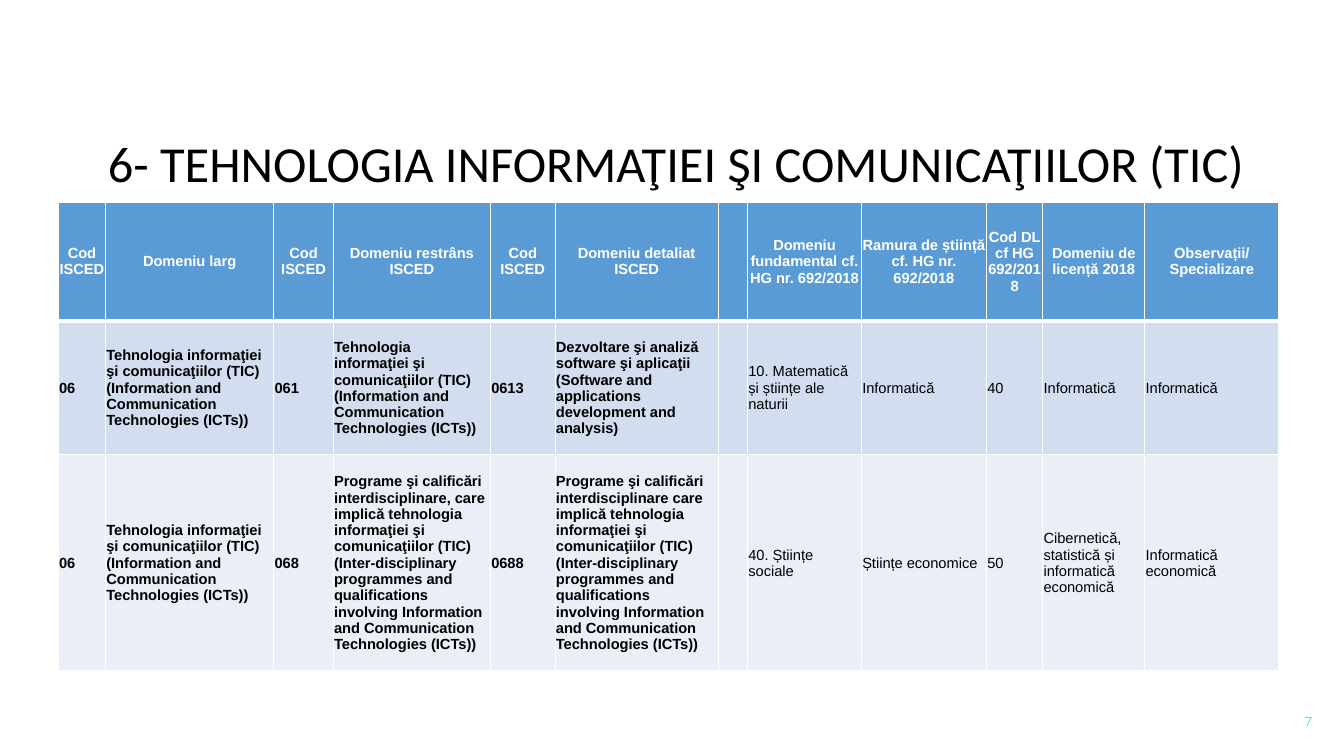
"""Builds the ISCED slide for field 6, information and communication technologies."""
from lxml.etree import SubElement
from pptx import Presentation
from pptx.dml.color import RGBColor
from pptx.enum.text import MSO_ANCHOR as Anchor, PP_ALIGN as Align
from pptx.oxml.ns import qn
from pptx.util import Cm, Pt

BLACK = RGBColor(0x00, 0x00, 0x00)
WHITE = RGBColor(0xFF, 0xFF, 0xFF)
SKY = RGBColor(0x5F, 0xCB, 0xEF)
HEADER_BLUE = RGBColor(0x5B, 0x9B, 0xD5)
BAND_DARK = RGBColor(0xD2, 0xDE, 0xEF)
BAND_LIGHT = RGBColor(0xEA, 0xEF, 0xF7)

BROAD_FIELD = ("Tehnologia informaţiei şi comunicaţiilor (TIC) "
               "(Information and Communication Technologies (ICTs))")
INTERDISCIPLINARY = ("Programe şi calificări interdisciplinare{} care implică tehnologia "
                     "informaţiei şi comunicaţiilor (TIC) (Inter-disciplinary programmes and "
                     "qualifications involving Information and Communication Technologies (ICTs))")
HEADINGS = ["Cod ISCED", "Domeniu larg", "Cod ISCED", "Domeniu restrâns ISCED", "Cod ISCED",
            "Domeniu detaliat ISCED", "", "Domeniu fundamental cf. HG nr. 692/2018",
            "Ramura de știință cf. HG nr. 692/2018", "Cod DL cf HG 692/2018",
            "Domeniu de licență 2018", "Observații/ Specializare"]
SOFTWARE = ["06", BROAD_FIELD, "061", BROAD_FIELD, "0613",
            "Dezvoltare şi analiză software şi aplicaţii "
            "(Software and applications development and analysis)",
            "", "10. Matematică și științe ale naturii", "Informatică", "40",
            "Informatică", "Informatică"]
ECONOMICS = ["06", BROAD_FIELD, "068", INTERDISCIPLINARY.format(","), "0688",
             INTERDISCIPLINARY.format(""), "", "40. Științe sociale", "Științe economice", "50",
             "Cibernetică, statistică și informatică economică", "Informatică economică"]
COLUMN_WIDTHS = [1.19, 4.24, 1.5, 3.96, 1.63, 4.11, 0.74, 2.87, 3.15, 1.42, 2.57, 3.38]
ROWS = [(HEADINGS, 2.97, HEADER_BLUE), (SOFTWARE, 3.38, BAND_DARK), (ECONOMICS, 5.44, BAND_LIGHT)]
ISCED_COLUMNS = 6


def add_label(left, top, width, height, text, align, font_name, size, color):
    box = slide.shapes.add_textbox(Cm(left), Cm(top), Cm(width), Cm(height))
    frame = box.text_frame
    frame.word_wrap = True
    frame.vertical_anchor = Anchor.MIDDLE
    frame.text = text
    paragraph = frame.paragraphs[0]
    paragraph.alignment = align
    font = paragraph.runs[0].font
    font.name, font.size, font.color.rgb = font_name, Pt(size), color
    return frame


def add_border(cell, side, points):
    line = SubElement(cell._tc.get_or_add_tcPr(), qn(f"a:ln{side}"), w=str(Pt(points)))
    SubElement(SubElement(line, qn("a:solidFill")), qn("a:srgbClr"), val=str(WHITE))


deck = Presentation()
deck.slide_width, deck.slide_height = Cm(33.87), Cm(19.05)
slide = deck.slides.add_slide(deck.slide_layouts[6])

title = add_label(2.44, 3.28, 29.21, 1.83, "6- TEHNOLOGIA INFORMAŢIEI ŞI COMUNICAŢIILOR (TIC)",
                  Align.CENTER, "Calibri", 36, BLACK)
title.margin_left = title.margin_right = 0
title.paragraphs[0].line_spacing = 0.9

fields = slide.shapes.add_table(len(ROWS), len(HEADINGS), Cm(1.47), Cm(5.11),
                                Cm(sum(COLUMN_WIDTHS)), Cm(11.79)).table
for column, width in zip(fields.columns, COLUMN_WIDTHS):
    column.width = Cm(width)

for row_index, (entries, height, fill_color) in enumerate(ROWS):
    fields.rows[row_index].height = Cm(height)
    is_header = row_index == 0
    for column_index, entry in enumerate(entries):
        cell = fields.cell(row_index, column_index)
        cell.vertical_anchor = Anchor.MIDDLE
        inset = Cm(0 if is_header else 0.02)
        cell.margin_left = cell.margin_right = cell.margin_top = inset
        cell.margin_bottom = 0
        for side in "LRTB":
            under_header = (row_index, side) in [(0, "B"), (1, "T")]
            add_border(cell, side, 3 if under_header else 1)
        cell.fill.solid()
        cell.fill.fore_color.rgb = fill_color
        if not entry:
            continue
        cell.text_frame.text = entry
        paragraph = cell.text_frame.paragraphs[0]
        paragraph.alignment = Align.CENTER if is_header else Align.LEFT
        font = paragraph.runs[0].font
        font.name, font.size = "Arial", Pt(10.5)
        font.bold = is_header or column_index < ISCED_COLUMNS
        font.color.rgb = WHITE if is_header else BLACK

add_label(25.7, 17.68, 7.62, 1.02, "7", Align.RIGHT, "Lato", 9, SKY)

deck.save("out.pptx")
